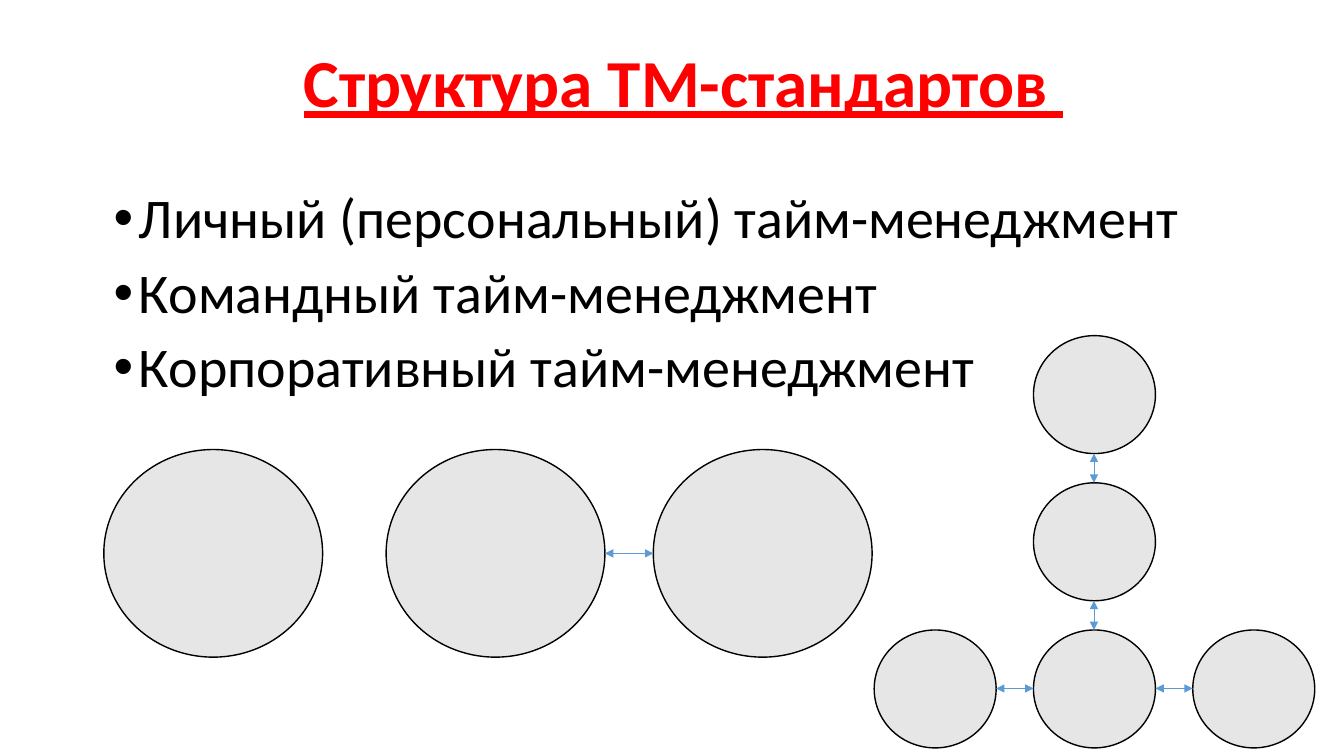
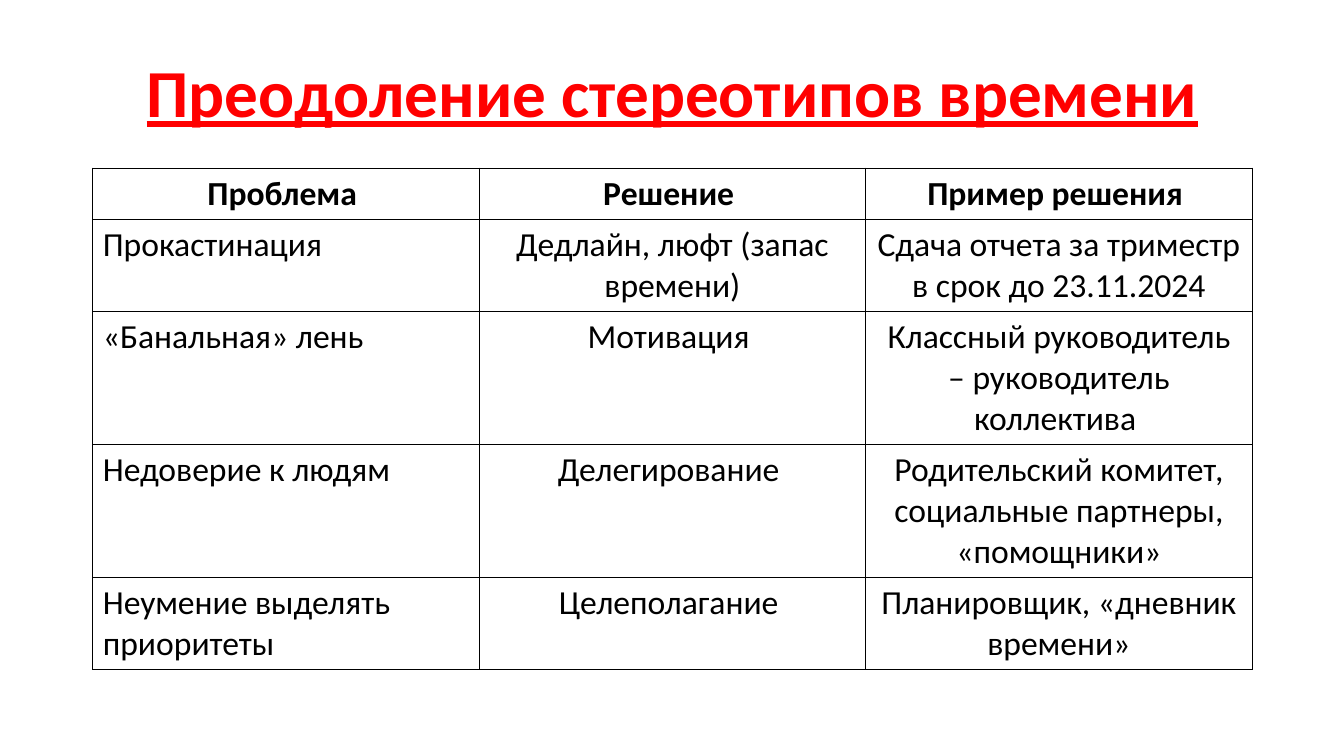
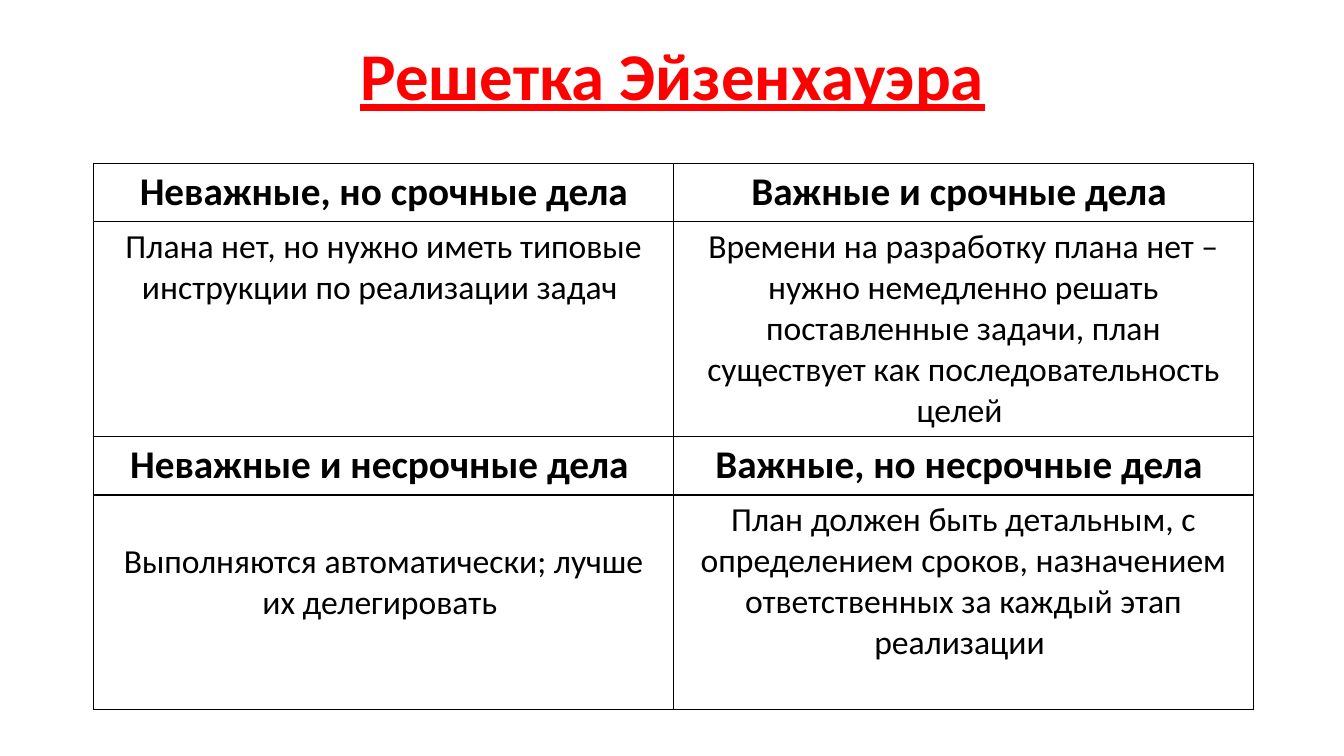
from lxml import etree
from pptx import Presentation, util as u
from pptx.dml.color import RGBColor
from pptx.enum import shapes, text
from pptx.oxml import ns

PX = 9144
FONT = "Calibri"
RED = RGBColor(0xFF, 0, 0)
BLACK = RGBColor(0, 0, 0)
GREY = RGBColor(0xE7, 0xE6, 0xE6)
BLUE = RGBColor(0x5B, 0x9B, 0xD5)
LEFT, MID = text.PP_ALIGN.LEFT, text.PP_ALIGN.CENTER

LEVELS = [
    "Личный (персональный) тайм-менеджмент",
    "Командный тайм-менеджмент",
    "Корпоративный тайм-менеджмент",
]
BIG, SMALL = (217, 206), (121, 117)
CIRCLES = {
    "self": (103, 446, BIG),
    "mate": (383, 446, BIG),
    "peer": (648, 446, BIG),
    "top": (1025, 333, SMALL),
    "core": (1025, 479, SMALL),
    "base": (1025, 625, SMALL),
    "west": (867, 625, SMALL),
    "east": (1183, 625, SMALL),
}
ACROSS = [("mate", "peer"), ("west", "base"), ("base", "east")]
DOWN = [("top", "core"), ("core", "base")]

HABITS = [
    ("Проблема ", "Решение ", "Пример решения "),
    ("Прокастинация", "Дедлайн, люфт (запас времени)",
     "Сдача отчета за триместр в срок до 23.11.2024"),
    ("«Банальная» лень", "Мотивация ",
     "Классный руководитель – руководитель коллектива "),
    ("Недоверие к людям", "Делегирование ",
     "Родительский комитет, социальные партнеры, «помощники»"),
    ("Неумение выделять приоритеты", "Целеполагание ",
     "Планировщик, «дневник времени»"),
]
MATRIX = [
    ("Неважные, но срочные дела", "Важные и срочные дела "),
    ("Плана нет, но нужно иметь типовые инструкции по реализации задач ",
     "Времени на разработку плана нет – нужно немедленно решать поставленные "
     "задачи, план существует как последовательность целей "),
    ("Неважные и несрочные дела ", "Важные, но несрочные дела "),
    ("Выполняются автоматически; лучше их делегировать ",
     "План должен быть детальным, с определением сроков, назначением "
     "ответственных за каждый этап реализации "),
]


def emu(*nums):
    return [u.Emu(round(n * PX)) for n in nums]


def style(para, size, color=BLACK, bold=False, align=LEFT):
    font = para.font
    font.name, font.size, font.bold = FONT, u.Pt(size), bold
    font.color.rgb = color
    para.alignment = align


def node(parent, tag, **attrs):
    return etree.SubElement(parent, ns.qn(tag), attrs)


def box(slide, *area):
    frame = slide.shapes.add_textbox(*emu(*area)).text_frame
    frame.word_wrap = True
    return frame


def page(deck, title, left, top, size=48):
    slide = deck.slides.add_slide(deck.slide_layouts[6])
    frame = box(slide, left, top, 1150, 145)
    frame.vertical_anchor = text.MSO_ANCHOR.MIDDLE
    para = frame.paragraphs[0]
    para.text = title
    para.line_spacing = 0.9
    style(para, size, RED, True, MID)
    para.font.underline = True
    return slide


def bullets(slide, items, *area):
    frame = box(slide, *area)
    for i, item in enumerate(items):
        para = frame.paragraphs[0] if i == 0 else frame.add_paragraph()
        para.text = item
        para.line_spacing = 0.9
        para.space_before = u.Pt(10)
        style(para, 40)
        props = para._p.get_or_add_pPr()
        props.set("marL", str(25 * PX))
        props.set("indent", str(-25 * PX))
        mark = etree.Element(ns.qn("a:buFont"), typeface="Arial")
        char = etree.Element(ns.qn("a:buChar"), char="•")
        base = props.find(ns.qn("a:defRPr"))
        base.addprevious(mark)
        base.addprevious(char)


def circle(slide, left, top, size):
    shape = slide.shapes.add_shape(
        shapes.MSO_SHAPE.OVAL, *emu(left, top, *size))
    shape.shadow.inherit = False
    shape.fill.solid()
    shape.fill.fore_color.rgb = GREY
    shape.line.color.rgb = BLACK
    shape.line.width = u.Pt(1)


def arrow(slide, *ends):
    link = slide.shapes.add_connector(
        shapes.MSO_CONNECTOR.STRAIGHT, *emu(*ends))
    link.line.color.rgb = BLUE
    link.line.width = u.Pt(0.5)
    line = link.line._get_or_add_ln()
    for tag in ("a:headEnd", "a:tailEnd"):
        node(line, tag, type="triangle")
    node(link._element.spPr, "a:effectLst")


def border(cell):
    props = cell._tc.get_or_add_tcPr()
    for i, side in enumerate(("a:lnL", "a:lnR", "a:lnT", "a:lnB")):
        line = etree.Element(ns.qn(side), w=str(u.Pt(1)))
        fill = node(line, "a:solidFill")
        node(fill, "a:srgbClr", val=str(BLACK))
        props.insert(i, line)


def grid(slide, rows, left, top, highs, look):
    count = len(rows[0])
    table = slide.shapes.add_table(
        len(rows), count, *emu(left, top, 1150, sum(highs))).table
    table.first_row = table.horz_banding = False
    for col in table.columns:
        col.width = emu(1150 / count)[0]
    for r, row in enumerate(rows):
        table.rows[r].height = emu(highs[r])[0]
        for c, words in enumerate(row):
            cell = table.cell(r, c)
            cell.text = words
            cell.fill.background()
            border(cell)
            size, bold, align = look(r, c)
            style(cell.text_frame.paragraphs[0], size, BLACK, bold, align)
    return table


def levels(deck):
    slide = page(deck, "Структура ТМ-стандартов ", 103, 13)
    bullets(slide, LEVELS, 103, 184, 1150, 236)
    for spot in CIRCLES.values():
        circle(slide, *spot)
    for a, b in ACROSS:
        x, y, (wide, high) = CIRCLES[a]
        mid = y + high // 2
        arrow(slide, x + wide, mid, CIRCLES[b][0], mid)
    for a, b in DOWN:
        x, y, (wide, high) = CIRCLES[a]
        mid = x + wide // 2
        arrow(slide, mid, y + high, mid, CIRCLES[b][1])


def habits(deck):
    slide = page(deck, "Преодоление стереотипов времени", 92, 22)
    grid(slide, HABITS, 92, 167, (51, 91, 132, 132, 91),
         lambda r, c: (24, r == 0, LEFT if r and c == 0 else MID))


def matrix(deck):
    slide = page(deck, "Решетка Эйзенхауэра", 92, 6, 47.7)
    table = grid(slide, MATRIX, 93, 162, (58, 213, 58, 213),
                 lambda r, c: (24 if r % 2 else 28, r % 2 == 0, MID))
    table.cell(3, 0).margin_top = emu(46)[0]


def main():
    deck = Presentation()
    deck.slide_width, deck.slide_height = emu(1333, 750)
    for build in (levels, habits, matrix):
        build(deck)
    deck.save("out.pptx")


if __name__ == "__main__":
    main()
